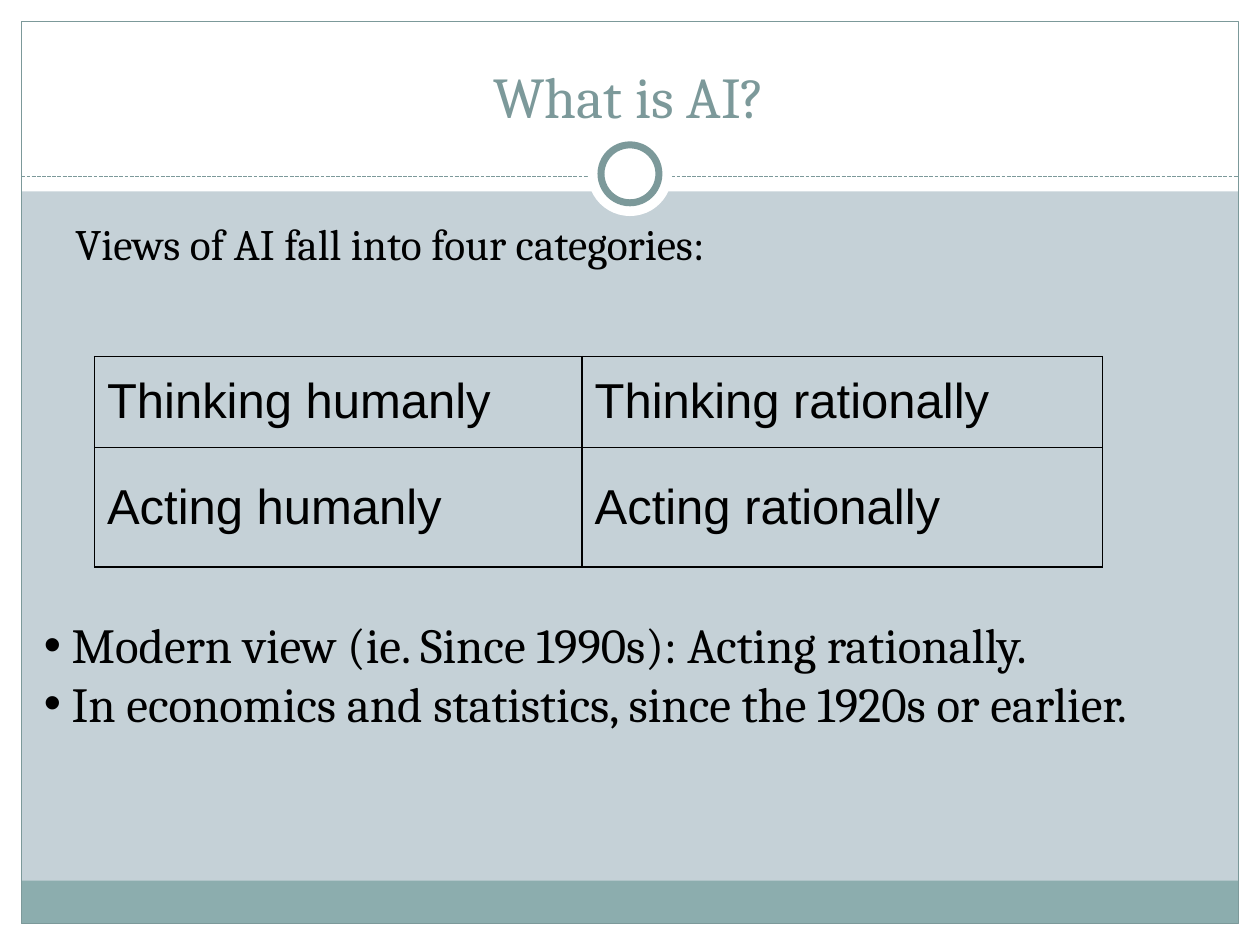
from lxml.etree import SubElement
from pptx import Presentation
from pptx.dml.color import RGBColor
from pptx.enum.dml import MSO_LINE
from pptx.enum.shapes import MSO_CONNECTOR, MSO_SHAPE
from pptx.enum.text import MSO_ANCHOR, PP_ALIGN
from pptx.oxml.ns import qn
from pptx.util import Inches, Pt

WIDTH, HEIGHT, MARGIN = 10, 7.5, 0.17
COLOURS = {"back": "C5D1D7", "white": "FFFFFF", "band": "8CADAE", "accent": "7C999A", "ink": "000000"}
VIEWS = [
    ["Thinking humanly", "Thinking rationally"],
    ["Acting humanly", "Acting rationally"],
]
NOTES = [
    "Modern view (ie. Since 1990s): Acting rationally.",
    "In economics and statistics, since the 1920s or earlier.",
]


def colour(name):
    """Return a named colour."""
    return RGBColor.from_string(COLOURS[name])


def add_panel(page, kind, area, fill=None, line_width=None):
    """Add a flat preset shape with an optional fill and accent outline."""
    shape = page.shapes.add_shape(kind, *map(Inches, area))
    shape.shadow.inherit = False
    if fill:
        shape.fill.solid()
        shape.fill.fore_color.rgb = colour(fill)
    else:
        shape.fill.background()
    if line_width:
        shape.line.color.rgb = colour("accent")
        shape.line.width = Pt(line_width)
    else:
        shape.line.fill.background()


def add_rule(page, top):
    """Add the dashed rule between the side margins."""
    ends = map(Inches, (MARGIN, top, WIDTH - MARGIN, top))
    rule = page.shapes.add_connector(MSO_CONNECTOR.STRAIGHT, *ends)
    rule.line.color.rgb = colour("accent")
    rule.line.width = Pt(0.75)
    rule.line.dash_style = MSO_LINE.SQUARE_DOT
    SubElement(rule.element.spPr, qn("a:effectLst"))


def add_span(para, text, size, font="Cambria", ink="ink"):
    """Add one styled run to a paragraph."""
    span = para.add_run()
    span.text = text
    span.font.name = font
    span.font.size = Pt(size)
    span.font.color.rgb = colour(ink)


def add_bullet(para, indent):
    """Give a paragraph a round bullet with a hanging indent."""
    properties = para._p.get_or_add_pPr()
    properties.set("marL", str(Inches(indent)))
    properties.set("indent", str(-Inches(indent)))
    SubElement(properties, qn("a:buFont"), typeface="Arial")
    SubElement(properties, qn("a:buChar"), char="•")


def add_text(page, area, lines, size, ink="ink", anchor=MSO_ANCHOR.TOP, align=PP_ALIGN.LEFT, bullet=None, spacing=None, before=0):
    """Add a wrapping text box with one paragraph per line."""
    box = page.shapes.add_textbox(*map(Inches, area))
    frame = box.text_frame
    frame.word_wrap = True
    frame.vertical_anchor = anchor
    for index, line in enumerate(lines):
        para = frame.add_paragraph() if index else frame.paragraphs[0]
        para.alignment = align
        para.line_spacing = spacing
        para.space_before = Pt(before)
        if bullet:
            add_bullet(para, bullet)
        add_span(para, line, size, ink=ink)


def add_borders(cell):
    """Draw a thin line on all four sides of a cell."""
    properties = cell._tc.get_or_add_tcPr()
    for index, side in enumerate(("lnL", "lnR", "lnT", "lnB")):
        line = SubElement(properties, qn(f"a:{side}"), w=str(Pt(1)))
        properties.remove(line)
        properties.insert(index, line)
        fill = SubElement(line, qn("a:solidFill"))
        SubElement(fill, qn("a:srgbClr"), val=COLOURS["ink"])


def add_grid(page, area, widths, heights, rows):
    """Add a bordered table without fills."""
    table = page.shapes.add_table(len(rows), len(widths), *map(Inches, area)).table
    table.first_row = table.horz_banding = False
    for column, width in zip(table.columns, widths):
        column.width = Inches(width)
    for row, height, texts in zip(table.rows, heights, rows):
        row.height = Inches(height)
        for cell, text in zip(row.cells, texts):
            cell.fill.background()
            cell.vertical_anchor = MSO_ANCHOR.MIDDLE
            add_span(cell.text_frame.paragraphs[0], text, 28, "Arial")
            add_borders(cell)


def add_frame(page):
    """Add the margins, footer band, outline, rule and centre ring."""
    inner_width, inner_height = WIDTH - 2 * MARGIN, HEIGHT - 2 * MARGIN
    margins = [
        (0, HEIGHT - MARGIN, WIDTH, MARGIN),
        (0, 0, WIDTH, 1.52),
        (0, 0, MARGIN, HEIGHT),
        (WIDTH - MARGIN, 0, MARGIN, HEIGHT),
    ]
    for area in margins:
        add_panel(page, MSO_SHAPE.RECTANGLE, area, "white")
    add_panel(page, MSO_SHAPE.RECTANGLE, (MARGIN, 6.99, inner_width, 0.34), "band")
    add_panel(page, MSO_SHAPE.RECTANGLE, (MARGIN, MARGIN, inner_width, inner_height), line_width=0.75)
    add_rule(page, 1.4)
    for size, line_width in ((0.67, None), (0.46, 4)):
        area = ((WIDTH - size) / 2, 1.38 - size / 2, size, size)
        add_panel(page, MSO_SHAPE.OVAL, area, "white", line_width)


def main():
    """Build and save the slide."""
    deck = Presentation()
    deck.slide_width, deck.slide_height = Inches(WIDTH), Inches(HEIGHT)
    page = deck.slides.add_slide(deck.slide_layouts[6])
    page.background.fill.solid()
    page.background.fill.fore_color.rgb = colour("back")
    add_frame(page)
    add_text(page, (0.33, 0.25, 9.33, 0.83), ["What is AI?"], 33, "accent", MSO_ANCHOR.BOTTOM, PP_ALIGN.CENTER)
    add_text(page, (0.5, 1.75, 9, 3.42), ["Views of AI fall into four categories:"], 24.8, spacing=0.8, before=5)
    add_grid(page, (0.75, 2.83, 8, 1.67), (3.87, 4.13), (0.72, 0.95), VIEWS)
    add_text(page, (0.25, 4.83, 9.42, 1.51), NOTES, 28, bullet=0.22)
    deck.save("out.pptx")


if __name__ == "__main__":
    main()
